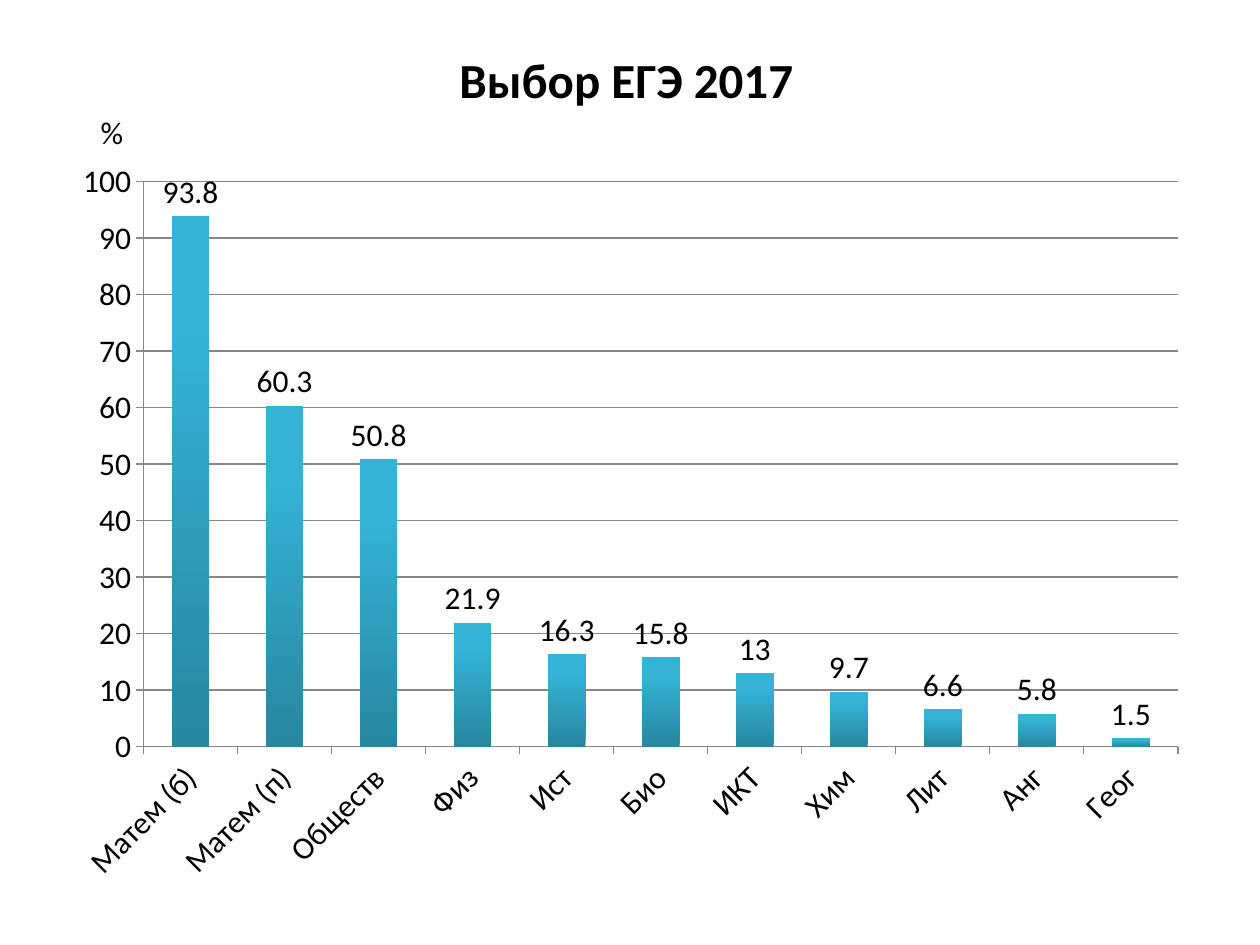
from pptx import Presentation
from pptx.chart.data import CategoryChartData
from pptx.dml.color import RGBColor
from pptx.enum.chart import XL_CHART_TYPE, XL_LABEL_POSITION, XL_TICK_MARK
from pptx.enum.text import MSO_ANCHOR, PP_ALIGN
from pptx.util import Inches, Pt

BLACK = RGBColor(0x00, 0x00, 0x00)
GRAY = RGBColor(0x87, 0x87, 0x87)
TEAL_DARK = RGBColor(0x27, 0x87, 0xA0)
TEAL_LIGHT = RGBColor(0x34, 0xB3, 0xD6)

EXAM_SHARES = {
    "Матем (б)": 93.8, "Матем (п)": 60.3, "Обществ": 50.8, "Физ": 21.9,
    "Ист": 16.3, "Био": 15.8, "ИКТ": 13, "Хим": 9.7, "Лит": 6.6,
    "Анг": 5.8, "Геог": 1.5,
}


def set_font(font, size, bold=False):
    font.name = "Calibri"
    font.size = Pt(size)
    font.bold = bold
    font.color.rgb = BLACK


prs = Presentation()
prs.slide_width, prs.slide_height = Inches(10), Inches(7.5)
s = prs.slides.add_slide(prs.slide_layouts[5])

# Title
title = s.shapes.title
title.left, title.top = Inches(0.47), Inches(0)
title.width, title.height = Inches(9), Inches(1.25)
tf = title.text_frame
tf.text = "Выбор ЕГЭ 2017"
tf.vertical_anchor = MSO_ANCHOR.MIDDLE
p = tf.paragraphs[0]
p.alignment = PP_ALIGN.CENTER
set_font(p.runs[0].font, 28, bold=True)

# Column chart
data = CategoryChartData()
data.categories = list(EXAM_SHARES)
data.add_series("Series 1", list(EXAM_SHARES.values()))
chart = s.shapes.add_chart(
    XL_CHART_TYPE.COLUMN_CLUSTERED, Inches(0.47), Inches(1.17),
    Inches(9.06), Inches(5.94), data).chart
chart.has_legend = False
chart.has_title = False
set_font(chart.font, 18)

plot = chart.plots[0]
plot.gap_width = 150
plot.vary_by_categories = False
plot.has_data_labels = True
labels = plot.data_labels
labels.show_value = True
labels.position = XL_LABEL_POSITION.OUTSIDE_END
set_font(labels.font, 18)

fill = plot.series[0].format.fill
fill.gradient()
fill.gradient_angle = 90
for stop, color, position in zip(fill.gradient_stops, (TEAL_DARK, TEAL_LIGHT), (0, 0.8)):
    stop.color.rgb = color
    stop.position = position

value_axis, category_axis = chart.value_axis, chart.category_axis
value_axis.minimum_scale, value_axis.maximum_scale = 0, 100
value_axis.major_unit = 10
value_axis.has_major_gridlines = True
for axis in (value_axis, category_axis):
    axis.major_tick_mark = XL_TICK_MARK.OUTSIDE
    set_font(axis.tick_labels.font, 18)
for line in (value_axis.major_gridlines.format.line,
             value_axis.format.line, category_axis.format.line):
    line.color.rgb = GRAY
    line.width = Pt(0.75)

# Category labels slant upwards by 45 degrees
category_axis._element.txPr.bodyPr.set("rot", str(-45 * 60000))

# Unit of the value axis
unit = s.shapes.add_textbox(Inches(0.7), Inches(0.85), Inches(0.55), Inches(0.4))
tf = unit.text_frame
tf.word_wrap = True
tf.text = "%"
set_font(tf.paragraphs[0].runs[0].font, 18)

prs.save("out.pptx")
